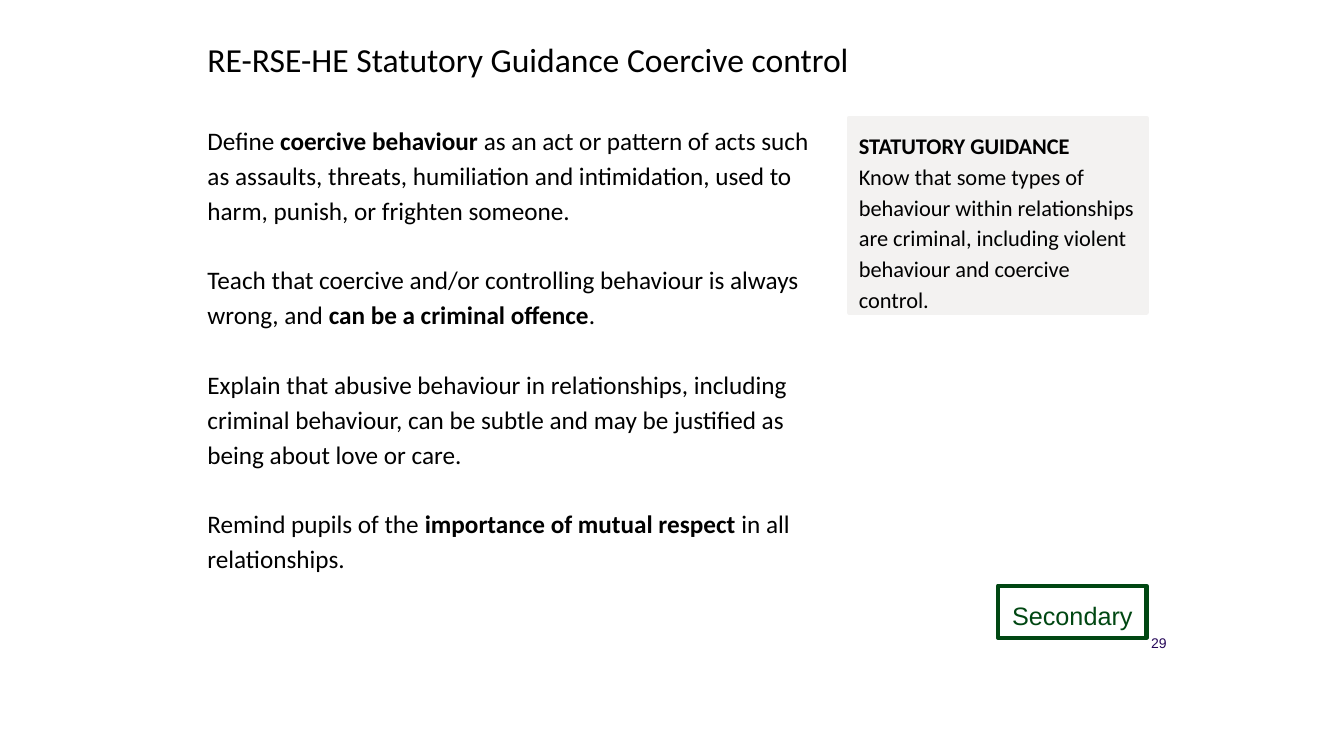
from pptx import Presentation
from pptx.dml.color import RGBColor
from pptx.enum.shapes import MSO_SHAPE
from pptx.enum.text import MSO_ANCHOR, PP_ALIGN
from pptx.util import Inches, Pt

LEFT_EDGE = 14.7
RIGHT_EDGE = 85.3


def colour(value):
    return RGBColor.from_string(value)


class GuidanceSlide:
    """Draws text and framed boxes placed by percentages of the slide's size."""

    def __init__(self, deck):
        self.width, self.height = deck.slide_width, deck.slide_height
        self.slide = deck.slides.add_slide(deck.slide_layouts[6])
        self.margin = Inches(0.1)

    def place(self, left, top, width, height):
        return (int(self.width * left / 100), int(self.height * top / 100),
                int(self.width * width / 100), int(self.height * height / 100))

    def fill_text(self, frame, paragraphs, size, font="Calibri", ink="000000",
                  align=PP_ALIGN.LEFT, anchor=MSO_ANCHOR.TOP, spacing=1.0, gap=0):
        frame.word_wrap = True
        frame.vertical_anchor = anchor
        frame.margin_left = frame.margin_right = self.margin
        frame.margin_top = frame.margin_bottom = self.margin
        for index, pieces in enumerate(paragraphs):
            paragraph = frame.paragraphs[0] if index == 0 else frame.add_paragraph()
            paragraph.alignment = align
            paragraph.line_spacing = spacing
            if index and gap:
                paragraph.space_before = Pt(gap)
            for wording, bold in pieces:
                run = paragraph.add_run()
                run.text = wording
                run.font.name, run.font.size, run.font.bold = font, Pt(size), bold
                run.font.color.rgb = colour(ink)

    def text(self, area, paragraphs, size, **style):
        box = self.slide.shapes.add_textbox(*self.place(*area))
        self.fill_text(box.text_frame, paragraphs, size, **style)

    def framed(self, area, paragraphs, size, border, fill=None, **style):
        box = self.slide.shapes.add_shape(MSO_SHAPE.RECTANGLE, *self.place(*area))
        box.shadow.inherit = False
        if fill:
            box.fill.solid()
            box.fill.fore_color.rgb = colour(fill)
        else:
            box.fill.background()
        box.line.color.rgb = colour(border)
        box.line.width = Pt(3)
        self.fill_text(box.text_frame, paragraphs, size, **style)


def main():
    deck = Presentation()
    deck.slide_width, deck.slide_height = Inches(13.33), Inches(7.5)
    page = GuidanceSlide(deck)

    page.text((LEFT_EDGE, 3.87, 68.94, 8.4),
              [[("RE-RSE-HE Statutory Guidance Coercive control", False)]], 24)

    teaching_points = [
        [("Define ", False), ("coercive behaviour", True),
         (" as an act or pattern of acts such as assaults, threats, humiliation "
          "and intimidation, used to harm, punish, or frighten someone.", False)],
        [("Teach that coercive and/or controlling behaviour is always wrong, and ", False),
         ("can be a criminal offence", True), (".", False)],
        [("Explain that abusive behaviour in relationships, including criminal "
          "behaviour, can be subtle and may be justified as being about love or care.", False)],
        [("Remind pupils of the ", False), ("importance of mutual respect", True),
         (" in all relationships.", False)],
    ]
    page.text((LEFT_EDGE, 14.67, 48.09, 53.47), teaching_points, 18, spacing=1.15, gap=25)

    statutory_guidance = [
        [("STATUTORY GUIDANCE", True)],
        [("Know that some types of behaviour within relationships are criminal, "
          "including violent behaviour and coercive control.", False)],
    ]
    page.framed((RIGHT_EDGE - 22.13, 15.6, 22.13, 25.73), statutory_guidance, 16,
                border="F3F2F1", fill="F3F2F1", spacing=1.15)

    page.framed((RIGHT_EDGE - 11.03, 77.47, 11.03, 6.93), [[("Secondary", False)]], 18,
                border="004712", font="Arial", ink="004712",
                align=PP_ALIGN.CENTER, spacing=1.15)

    page.text((84.62, 82.53, 2.93, 4.93), [[("29", False)]], 10, font="Arial",
              ink="260859", align=PP_ALIGN.RIGHT, anchor=MSO_ANCHOR.MIDDLE)

    deck.save("out.pptx")


if __name__ == "__main__":
    main()
